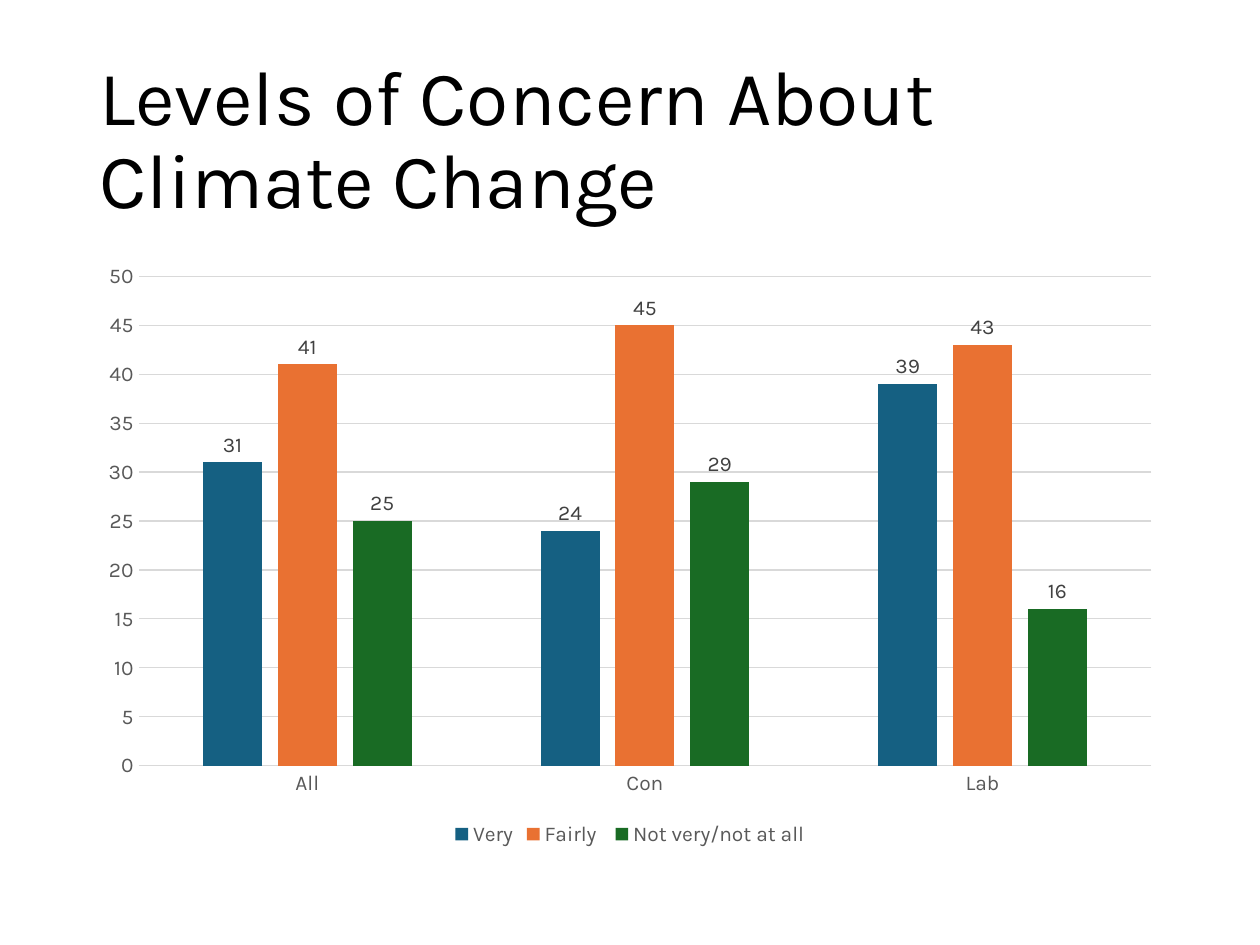
from pptx import Presentation
from pptx.chart.data import CategoryChartData
from pptx.dml.color import RGBColor
from pptx.enum.chart import (XL_CHART_TYPE, XL_LABEL_POSITION,
                             XL_LEGEND_POSITION, XL_TICK_MARK)
from pptx.enum.text import MSO_ANCHOR
from pptx.util import Inches, Pt

COLUMN_CLUSTERED = XL_CHART_TYPE.COLUMN_CLUSTERED
OUTSIDE_END = XL_LABEL_POSITION.OUTSIDE_END
LEGEND_BOTTOM = XL_LEGEND_POSITION.BOTTOM
NO_TICK = XL_TICK_MARK.NONE
MIDDLE = MSO_ANCHOR.MIDDLE

FONT = "Karla"
BLACK = RGBColor(0x00, 0x00, 0x00)
AXIS_GRAY = RGBColor(0x59, 0x59, 0x59)
LABEL_GRAY = RGBColor(0x40, 0x40, 0x40)
GRID_GRAY = RGBColor(0xD9, 0xD9, 0xD9)
BLUE = RGBColor(0x15, 0x60, 0x82)
ORANGE = RGBColor(0xE9, 0x71, 0x32)
GREEN = RGBColor(0x19, 0x6B, 0x24)

CATEGORIES = ["All", "Con", "Lab"]
CONCERN_LEVELS = [
    ("Very", [31, 24, 39], BLUE),
    ("Fairly ", [41, 45, 43], ORANGE),
    ("Not very/not at all", [25, 29, 16], GREEN),
]


def style_font(font, size, color):
    font.name = FONT
    font.size = Pt(size)
    font.bold = False
    font.color.rgb = color


def style_line(line):
    line.color.rgb = GRID_GRAY
    line.width = Pt(0.75)


def add_title(slide, left, top, width, height):
    text_frame = slide.shapes.add_textbox(left, top, width, height).text_frame
    text_frame.word_wrap = True
    text_frame.vertical_anchor = MIDDLE
    text_frame.text = "Levels of Concern About Climate Change"
    paragraph = text_frame.paragraphs[0]
    paragraph.line_spacing = 0.9
    style_font(paragraph.runs[0].font, 44, BLACK)


def add_concern_chart(slide, left, top, width, height):
    chart_data = CategoryChartData()
    chart_data.categories = CATEGORIES
    for name, values, _ in CONCERN_LEVELS:
        chart_data.add_series(name, values)
    chart = slide.shapes.add_chart(
        COLUMN_CLUSTERED, left, top, width, height, chart_data).chart
    chart.has_title = False
    style_font(chart.font, 10, BLACK)

    # Axes and gridlines
    for axis in (chart.category_axis, chart.value_axis):
        axis.major_tick_mark = NO_TICK
        axis.minor_tick_mark = NO_TICK
        style_font(axis.tick_labels.font, 12, AXIS_GRAY)
    style_line(chart.category_axis.format.line)
    chart.value_axis.format.line.fill.background()
    chart.value_axis.has_major_gridlines = True
    style_line(chart.value_axis.major_gridlines.format.line)

    # Legend
    chart.has_legend = True
    chart.legend.position = LEGEND_BOTTOM
    chart.legend.include_in_layout = False
    style_font(chart.legend.font, 12, AXIS_GRAY)

    # Columns and value labels
    plot = chart.plots[0]
    plot.gap_width = 219
    plot.overlap = -27
    plot.vary_by_categories = False
    for series, (_, _, color) in zip(plot.series, CONCERN_LEVELS):
        series.format.fill.solid()
        series.format.fill.fore_color.rgb = color
        series.invert_if_negative = False
        labels = series.data_labels
        labels.show_value = True
        labels.position = OUTSIDE_END
        style_font(labels.font, 12, LABEL_GRAY)


def main():
    presentation = Presentation()
    presentation.slide_width = Inches(10)
    presentation.slide_height = Inches(7.5)
    slide = presentation.slides.add_slide(presentation.slide_layouts[6])

    left, width = Inches(0.69), Inches(8.62)
    add_title(slide, left, Inches(0.4), width, Inches(1.45))
    add_concern_chart(slide, left, Inches(2), width, Inches(4.76))
    presentation.save("out.pptx")


if __name__ == "__main__":
    main()
